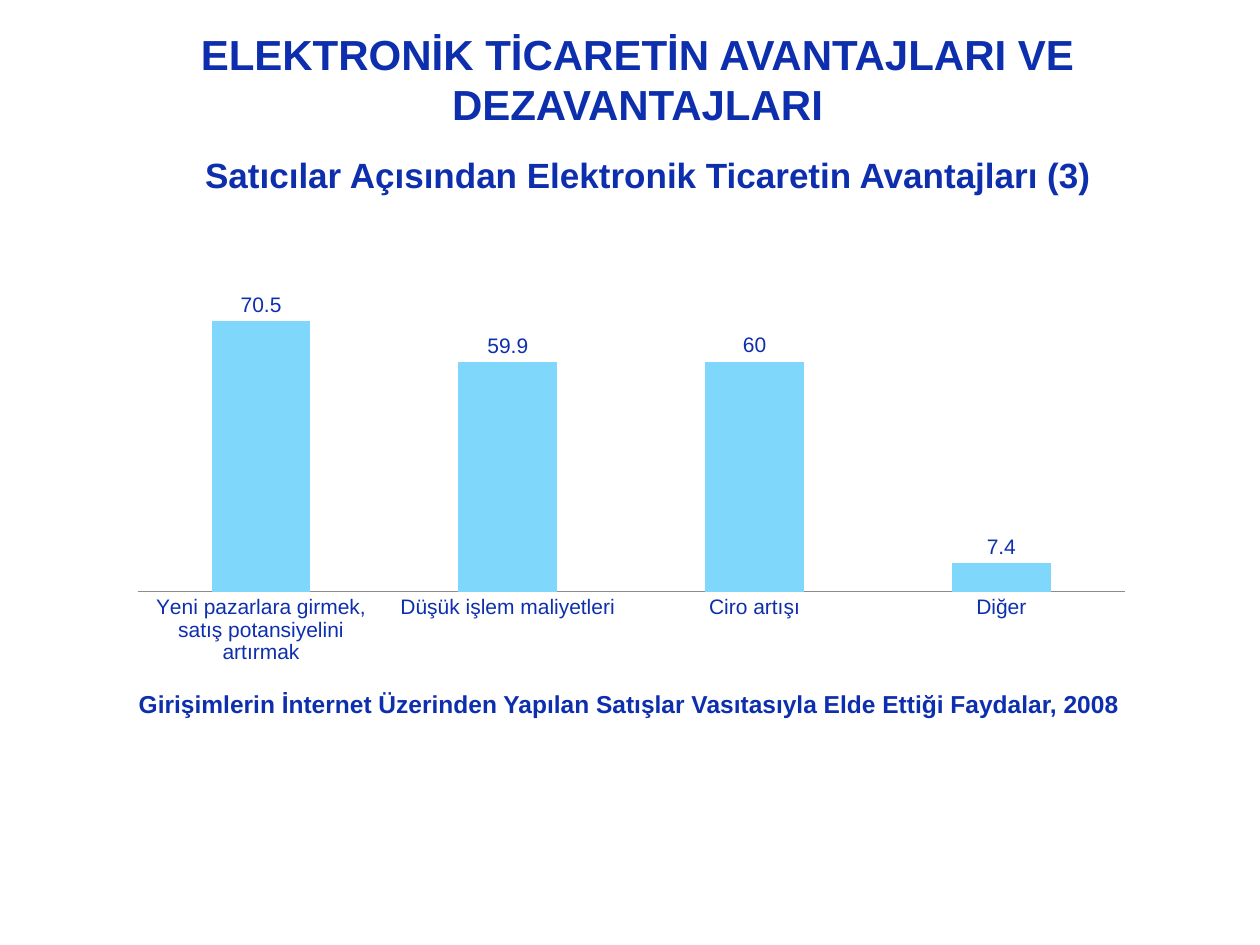
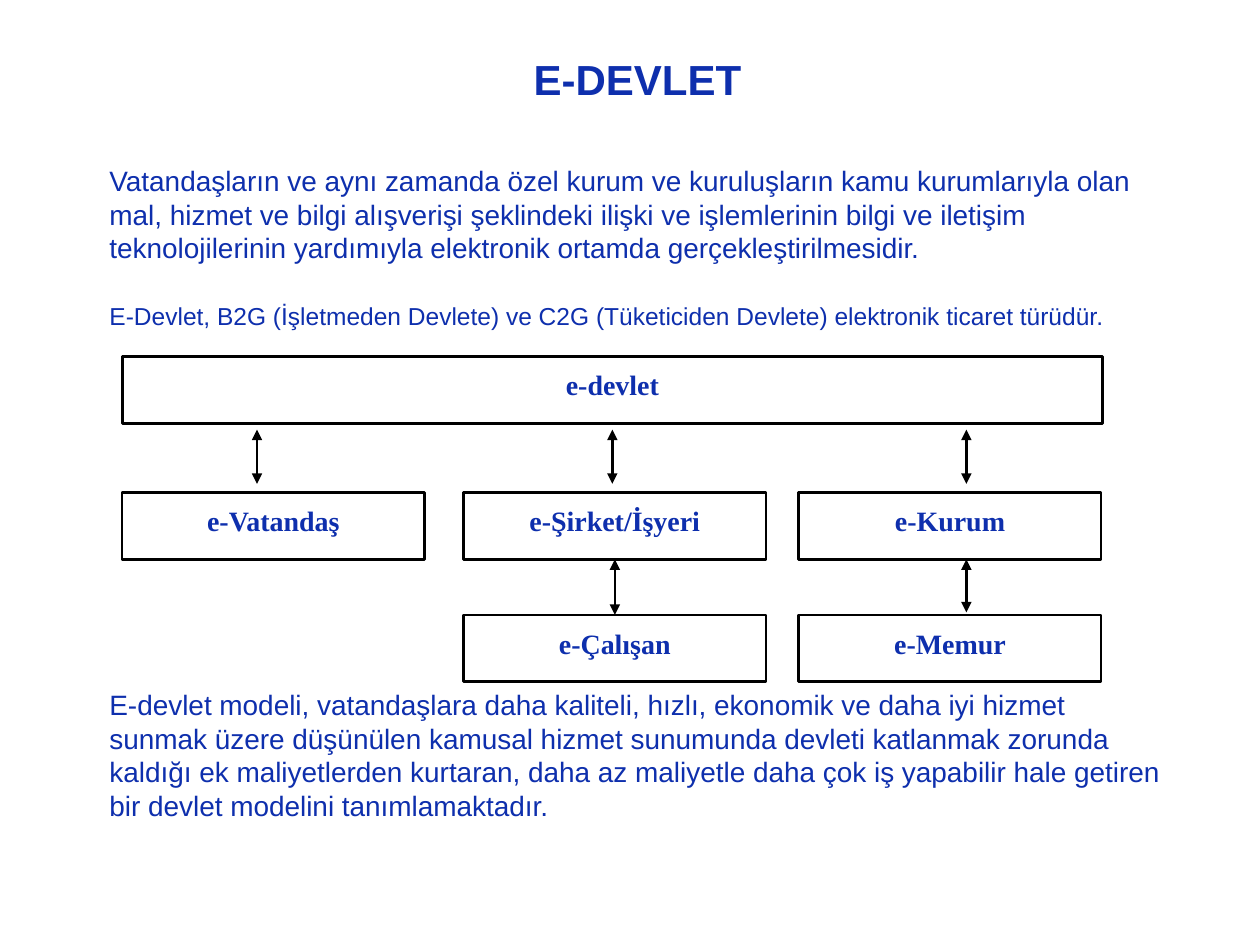
from lxml.etree import SubElement
from pptx import Presentation
from pptx.chart.data import CategoryChartData
from pptx.dml.color import RGBColor
from pptx.enum.chart import XL_CHART_TYPE, XL_LABEL_POSITION, XL_TICK_MARK
from pptx.enum.shapes import MSO_CONNECTOR, MSO_SHAPE
from pptx.enum.text import MSO_ANCHOR, PP_ALIGN
from pptx.oxml.ns import qn
from pptx.util import Inches, Pt

BLUE = RGBColor(0x0E, 0x2F, 0xAD)
SKY = RGBColor(0x7F, 0xD7, 0xFC)
GRAY = RGBColor(0x8C, 0x8C, 0x8C)
BLACK = RGBColor(0, 0, 0)
WHITE = RGBColor(255, 255, 255)
SANS = "Arial"
SERIF = "Times New Roman"

BOX_W, BOX_H = 2.4, 0.53
COLUMNS = (0.97, 3.68, 6.34)
ARROWS = (2.04, 4.86, 7.67)
TOP_ROW, MIDDLE_ROW, LOW_ROW = 2.83, 3.91, 4.88


def write(tf, text, size=16, font=SANS, bold=False, align=PP_ALIGN.LEFT,
          anchor=MSO_ANCHOR.TOP, spacing=None, after=None):
    """Put one formatted paragraph in a text frame."""
    tf.word_wrap = True
    tf.vertical_anchor = anchor
    p = tf.paragraphs[0]
    p.alignment = align
    p.line_spacing = spacing
    p.space_after = after
    r = p.add_run()
    r.text = text
    r.font.name = font
    r.font.size = Pt(size)
    r.font.bold = bold
    r.font.color.rgb = BLUE


def add_text(s, text, x, y, w, h, **fmt):
    """Add a text box."""
    sp = s.shapes.add_textbox(Inches(x), Inches(y), Inches(w), Inches(h))
    write(sp.text_frame, text, **fmt)


def add_slide(prs, title):
    """Add a blank slide with the shared title style."""
    s = prs.slides.add_slide(prs.slide_layouts[6])
    add_text(s, title, 0.56, 0, 9, 1.25, size=24, bold=True,
             align=PP_ALIGN.CENTER, anchor=MSO_ANCHOR.MIDDLE)
    return s


def add_box(s, text, x, y, w=BOX_W):
    """Add an outlined box of the e-government diagram."""
    sp = s.shapes.add_shape(MSO_SHAPE.RECTANGLE, Inches(x), Inches(y),
                            Inches(w), Inches(BOX_H))
    sp.shadow.inherit = False
    sp.fill.solid()
    sp.fill.fore_color.rgb = WHITE
    sp.line.color.rgb = BLACK
    sp.line.width = Pt(1.5)
    write(sp.text_frame, text, font=SERIF, bold=True,
          align=PP_ALIGN.CENTER, spacing=1.15, after=Pt(10))
    return sp


def add_arrow(s, x, top, bottom):
    """Add a vertical double-headed arrow."""
    c = s.shapes.add_connector(MSO_CONNECTOR.STRAIGHT, Inches(x), Inches(top),
                               Inches(x), Inches(bottom))
    c.line.color.rgb = BLACK
    c.line.width = Pt(1.5)
    ln = c.line._get_or_add_ln()
    for end in ("a:headEnd", "a:tailEnd"):
        SubElement(ln, qn(end), type="triangle")
    SubElement(c._element.spPr, qn("a:effectLst"))
    return c


def add_benefit_chart(s, benefits):
    """Add the column chart of benefits from internet sales."""
    data = CategoryChartData()
    data.categories = list(benefits)
    data.add_series("Series 1", benefits.values())
    chart = s.shapes.add_chart(XL_CHART_TYPE.COLUMN_CLUSTERED, Inches(0.93),
                               Inches(2.2), Inches(8.16), Inches(3.13), data).chart
    chart.has_title = False
    chart.has_legend = False
    chart.font.name = SANS
    chart.font.size = Pt(12)
    chart.font.color.rgb = BLUE

    values = chart.value_axis
    values.visible = False
    values.has_major_gridlines = False
    values.minimum_scale, values.maximum_scale = 0, 80
    chart.category_axis.major_tick_mark = XL_TICK_MARK.NONE
    chart.category_axis.format.line.color.rgb = GRAY

    plot = chart.plots[0]
    plot.vary_by_categories = False
    plot.gap_width = 150
    plot.overlap = -25
    fill = plot.series[0].format.fill
    fill.solid()
    fill.fore_color.rgb = SKY
    plot.has_data_labels = True
    plot.data_labels.show_value = True
    plot.data_labels.position = XL_LABEL_POSITION.OUTSIDE_END


def add_advantages_slide(prs):
    """Build the slide on the sellers' advantages."""
    s = add_slide(prs, "ELEKTRONİK TİCARETİN AVANTAJLARI VE DEZAVANTAJLARI")
    add_text(s, "Satıcılar Açısından Elektronik Ticaretin Avantajları (3)",
             1.53, 1.17, 7.83, 0.44, size=20, bold=True)
    add_benefit_chart(s, {
        "Yeni pazarlara girmek, satış potansiyelini artırmak": 70.5,
        "Düşük işlem maliyetleri": 59.9,
        "Ciro artışı": 60,
        "Diğer": 7.4,
    })
    add_text(s, "Girişimlerin İnternet Üzerinden Yapılan Satışlar Vasıtasıyla "
             "Elde Ettiği Faydalar, 2008", 0.74, 5.42, 8.51, 0.34,
             size=14, bold=True, align=PP_ALIGN.CENTER)


def add_diagram(s):
    """Draw the e-government boxes and the arrows between them."""
    add_box(s, "e-devlet", COLUMNS[0], TOP_ROW, w=7.78)
    names = ("e-Vatandaş", "e-Şirket/İşyeri", "e-Kurum")
    _, company, _ = [add_box(s, name, x, MIDDLE_ROW)
                     for name, x in zip(names, COLUMNS)]
    employee, _ = [add_box(s, name, x, LOW_ROW)
                   for name, x in zip(("e-Çalışan", "e-Memur"), COLUMNS[1:])]
    for x in ARROWS:
        add_arrow(s, x, 3.41, 3.84)
    add_arrow(s, ARROWS[2], MIDDLE_ROW + BOX_H, 4.86)
    c = add_arrow(s, ARROWS[1], MIDDLE_ROW + BOX_H, LOW_ROW)
    c.begin_connect(company, 2)
    c.end_connect(employee, 0)


def add_government_slide(prs):
    """Build the slide on e-government."""
    s = add_slide(prs, "E-DEVLET")
    add_text(s, "Vatandaşların ve aynı zamanda özel kurum ve kuruluşların kamu "
             "kurumlarıyla olan mal, hizmet ve bilgi alışverişi şeklindeki ilişki "
             "ve işlemlerinin bilgi ve iletişim teknolojilerinin yardımıyla "
             "elektronik ortamda gerçekleştirilmesidir.", 0.77, 1.25, 8.69, 0.91)
    add_text(s, "E-Devlet, B2G (İşletmeden Devlete) ve C2G (Tüketiciden Devlete) "
             "elektronik ticaret türüdür.", 0.77, 2.34, 8.29, 0.34, size=14)
    add_diagram(s)
    add_text(s, "E-devlet modeli, vatandaşlara daha kaliteli, hızlı, ekonomik ve "
             "daha iyi hizmet sunmak üzere düşünülen kamusal hizmet sunumunda "
             "devleti katlanmak zorunda kaldığı ek maliyetlerden kurtaran, daha az "
             "maliyetle daha çok iş yapabilir hale getiren bir devlet modelini "
             "tanımlamaktadır.", 0.77, 5.41, 8.54, 1.18)


def main():
    """Build and save the presentation."""
    prs = Presentation()
    prs.slide_width = Inches(10)
    prs.slide_height = Inches(7.5)
    add_advantages_slide(prs)
    add_government_slide(prs)
    prs.save("out.pptx")


if __name__ == "__main__":
    main()
